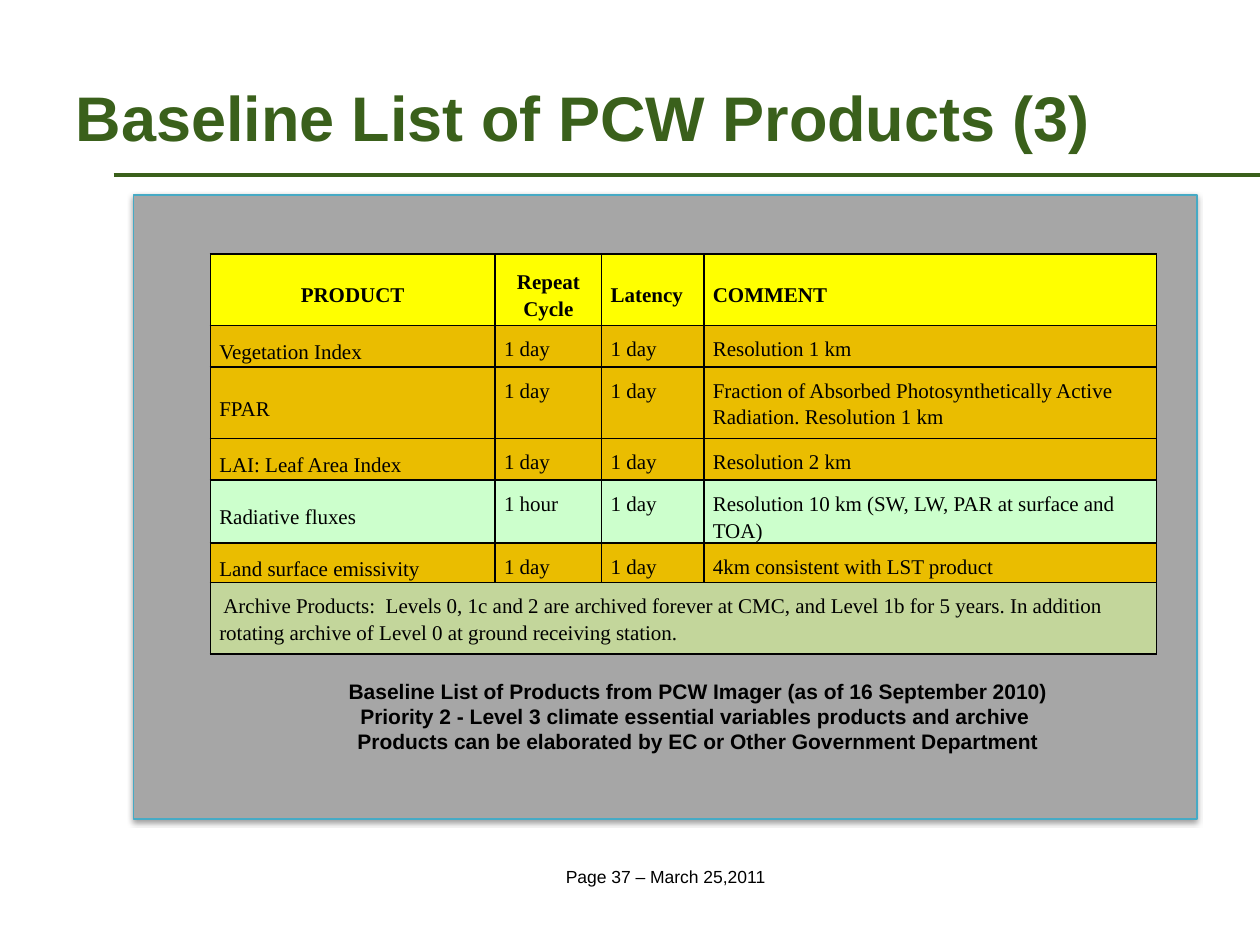
from dataclasses import dataclass

from lxml import etree
from pptx import Presentation
from pptx.dml.color import RGBColor
from pptx.enum import shapes, text
from pptx.oxml import ns
from pptx.util import Cm, Pt


@dataclass(frozen=True)
class Theme:
    green: str = "3A601B"
    black: str = "000000"
    panel: str = "A6A6A6"
    panel_edge: str = "46AAC5"
    header: str = "FFFF00"
    amber: str = "EABD00"
    mint: str = "CCFFCC"
    sage: str = "C3D69B"
    sans: str = "Arial"
    serif: str = "Times New Roman"
    title_size: int = 36
    text_size: int = 12
    footer_size: int = 10


theme = Theme()


def write(paragraph, words, font, size, color=theme.black, bold=False, align=text.PP_ALIGN.LEFT):
    """Add one formatted run to a paragraph."""
    paragraph.alignment = align
    run = paragraph.add_run()
    run.text = words
    run.font.name = font
    run.font.size = Pt(size)
    run.font.bold = bold
    run.font.color.rgb = RGBColor.from_string(color)


def add_xml(parent, tag, **attributes):
    return etree.SubElement(parent, ns.qn(tag), attributes)


presentation = Presentation()
presentation.slide_width, presentation.slide_height = Cm(25.4), Cm(19.05)
slide = presentation.slides.add_slide(presentation.slide_layouts[5])

# Title and rule
title = slide.shapes.title
title.left, title.top, title.width, title.height = Cm(1.27), Cm(0.76), Cm(22.86), Cm(3.18)
title.text_frame.vertical_anchor = text.MSO_ANCHOR.MIDDLE
write(title.text_frame.paragraphs[0], "Baseline List of PCW Products (3)",
      theme.sans, theme.title_size, theme.green, bold=True)

rule = slide.shapes.add_connector(shapes.MSO_CONNECTOR.STRAIGHT,
                                  Cm(2.29), Cm(3.53), Cm(25.4), Cm(3.53))
rule.line.color.rgb = RGBColor.from_string(theme.green)
rule.line.width = Pt(2.25)
add_xml(rule._element.spPr, "a:effectLst")

# Grey panel with a soft shadow below
panel = slide.shapes.add_shape(shapes.MSO_SHAPE.RECTANGLE,
                               Cm(2.69), Cm(3.93), Cm(21.44), Cm(12.58))
panel.fill.solid()
panel.fill.fore_color.rgb = RGBColor.from_string(theme.panel)
panel.line.color.rgb = RGBColor.from_string(theme.panel_edge)
panel.line.width = Pt(0.75)
panel.shadow.inherit = False
shadow = add_xml(panel._element.spPr.find(ns.qn("a:effectLst")), "a:outerShdw",
                 blurRad=str(Pt(3.1)), dist=str(Pt(1.6)), dir="5400000", rotWithShape="0")
add_xml(add_xml(shadow, "a:srgbClr", val=theme.black), "a:alpha", val="38000")

# Product table: fill, row height in cm, cell texts
products = [
    (theme.header, 1.44, ["PRODUCT", "Repeat Cycle", "Latency", "COMMENT"]),
    (theme.amber, 0.84, ["Vegetation Index", "1 day", "1 day", "Resolution 1 km"]),
    (theme.amber, 1.44, ["FPAR", "1 day", "1 day",
                         "Fraction of Absorbed Photosynthetically Active Radiation. Resolution 1 km"]),
    (theme.amber, 0.84, ["LAI: Leaf Area Index", "1 day", "1 day", "Resolution 2 km"]),
    (theme.mint, 1.27, ["Radiative fluxes", "1 hour", "1 day",
                        "Resolution 10 km (SW, LW, PAR at surface and TOA)"]),
    (theme.amber, 0.79, ["Land surface emissivity", "1 day", "1 day",
                         "4km consistent with LST product"]),
    (theme.sage, 1.44, [" Archive Products:  Levels 0, 1c and 2 are archived forever at CMC, "
                        "and Level 1b for 5 years. In addition rotating archive of Level 0 "
                        "at ground receiving station."]),
]
column_widths = [5.74, 2.15, 2.06, 9.12]
table = slide.shapes.add_table(len(products), len(column_widths), Cm(4.24), Cm(5.12),
                               Cm(sum(column_widths)),
                               Cm(sum(height for _, height, _ in products))).table
for column, width in zip(table.columns, column_widths):
    column.width = Cm(width)
archive_row = len(products) - 1
table.cell(archive_row, 0).merge(table.cell(archive_row, len(column_widths) - 1))

for row_index, (fill, height, words) in enumerate(products):
    table.rows[row_index].height = Cm(height)
    for column_index, cell in enumerate(table.rows[row_index].cells):
        cell.margin_left = cell.margin_right = cell.margin_top = Cm(0.18)
        cell.margin_bottom = 0
        is_header = row_index == 0
        if is_header or (column_index == 0 and row_index != archive_row):
            cell.vertical_anchor = text.MSO_ANCHOR.MIDDLE
        properties = cell._tc.get_or_add_tcPr()
        for side in ("a:lnL", "a:lnR", "a:lnT", "a:lnB"):
            border = add_xml(properties, side, w=str(Pt(1)))
            add_xml(add_xml(border, "a:solidFill"), "a:srgbClr", val=theme.black)
        cell.fill.solid()
        cell.fill.fore_color.rgb = RGBColor.from_string(fill)
        if column_index < len(words):
            paragraph = cell.text_frame.paragraphs[0]
            paragraph.line_spacing = 1.15
            paragraph.space_after = Pt(10)
            centred = is_header and column_index < 2
            write(paragraph, words[column_index], theme.serif, theme.text_size, bold=is_header,
                  align=text.PP_ALIGN.CENTER if centred else text.PP_ALIGN.LEFT)

# Caption and footer: box in cm, size, bold, lines
text_boxes = [
    ((4.88, 13.54, 18.39, 1.8), theme.text_size, True,
     ["Baseline List of Products from PCW Imager (as of 16 September 2010)",
      "Priority 2 - Level 3 climate essential variables products and archive ",
      "Products can be elaborated by EC or Other Government Department"]),
    ((2.11, 17.32, 22.61, 0.69), theme.footer_size, False, ["Page 37 – March 25,2011"]),
]
for box, size, bold, lines in text_boxes:
    frame = slide.shapes.add_textbox(*(Cm(length) for length in box)).text_frame
    frame.word_wrap = True
    frame.vertical_anchor = text.MSO_ANCHOR.MIDDLE
    for index, line in enumerate(lines):
        paragraph = frame.add_paragraph() if index else frame.paragraphs[0]
        write(paragraph, line, theme.sans, size, bold=bold, align=text.PP_ALIGN.CENTER)

presentation.save("out.pptx")
